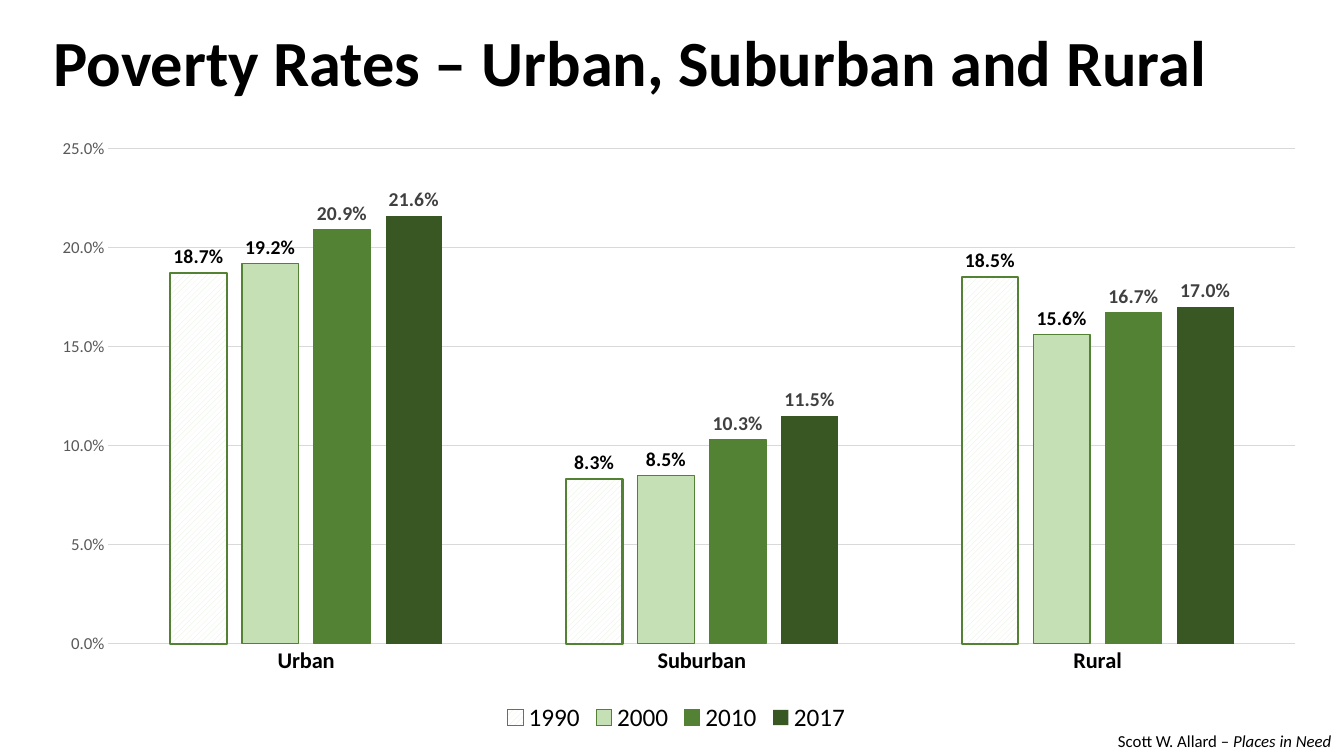
from lxml import etree
from pptx import Presentation
from pptx.chart.data import CategoryChartData
from pptx.dml.color import RGBColor
from pptx.enum.chart import XL_CHART_TYPE, XL_LABEL_POSITION, XL_LEGEND_POSITION, XL_TICK_MARK
from pptx.enum.dml import MSO_PATTERN
from pptx.enum.text import MSO_ANCHOR, PP_ALIGN
from pptx.oxml.ns import qn
from pptx.util import Inches, Pt


def rgb(hex_color):
    return RGBColor.from_string(hex_color)


def style(font, size, color="000000", bold=False):
    font.name = "Calibri"
    font.size = Pt(size)
    font.bold = bold
    font.color.rgb = rgb(color)


prs = Presentation()
prs.slide_width, prs.slide_height = Inches(13.33), Inches(7.5)
slide = prs.slides.add_slide(prs.slide_layouts[5])

# Title
title = slide.shapes.title
title.left, title.top = Inches(0.43), Inches(0.16)
title.width, title.height = Inches(12.45), Inches(0.88)
title.fill.solid()
title.fill.fore_color.rgb = rgb("FFFFFF")
title.text_frame.text = "Poverty Rates – Urban, Suburban and Rural"
title.text_frame.vertical_anchor = MSO_ANCHOR.MIDDLE
heading = title.text_frame.paragraphs[0]
heading.alignment = PP_ALIGN.LEFT
style(heading.font, 46, bold=True)

# Poverty rates: year, rates, fill, outline, outline width, label colour
years = [
    ("1990", (0.187, 0.083, 0.185), None, "548235", 1.5, "000000"),
    ("2000", (0.192, 0.085, 0.156), "C5E0B4", "548235", 1, "000000"),
    ("2010", (0.209, 0.103, 0.167), "548235", "548235", 0.75, "404040"),
    ("2017", (0.216, 0.115, 0.17), "385723", None, 0, "404040"),
]
rates = CategoryChartData(number_format="0.0%")
rates.categories = ["Urban", "Suburban", "Rural"]
for year, values, *_ in years:
    rates.add_series(year, values)
chart = slide.shapes.add_chart(
    XL_CHART_TYPE.COLUMN_CLUSTERED,
    Inches(0.42), Inches(1.26), Inches(12.58), Inches(6.06), rates,
).chart
chart.has_title = False
style(chart.font, 10)

# Columns and their labels
plot = chart.plots[0]
plot.gap_width, plot.overlap = 219, -27
plot.vary_by_categories = False
for series, (_, _, fill, outline, width, label_color) in zip(plot.series, years):
    column = series.format
    if fill:
        column.fill.solid()
        column.fill.fore_color.rgb = rgb(fill)
    else:
        column.fill.patterned()
        column.fill.pattern = MSO_PATTERN.WIDE_UPWARD_DIAGONAL
        column.fill.fore_color.rgb = rgb("E2F0D9")
        column.fill.back_color.rgb = rgb("FFFFFF")
    if outline:
        column.line.color.rgb = rgb(outline)
        column.line.width = Pt(width)
    else:
        column.line.fill.background()
    labels = series.data_labels
    labels.show_value = True
    labels.position = XL_LABEL_POSITION.OUTSIDE_END
    labels.number_format, labels.number_format_is_linked = "0.0%", False
    style(labels.font, 14, label_color, bold=True)

# Axes
areas, percent = chart.category_axis, chart.value_axis
for axis in (areas, percent):
    axis.major_tick_mark = axis.minor_tick_mark = XL_TICK_MARK.NONE
style(areas.tick_labels.font, 16, bold=True)
style(percent.tick_labels.font, 12, "595959")
percent.minimum_scale, percent.maximum_scale, percent.major_unit = 0, 0.25, 0.05
percent.tick_labels.number_format = "0.0%"
percent.tick_labels.number_format_is_linked = False
percent.format.line.fill.background()
for line in (areas.format.line, percent.major_gridlines.format.line):
    line.color.rgb = rgb("D9D9D9")
    line.width = Pt(0.75)

# Legend
chart.has_legend = True
chart.legend.position = XL_LEGEND_POSITION.BOTTOM
chart.legend.include_in_layout = False
style(chart.legend.font, 18)

# Place of the plot inside the chart
plot_area = chart.element.find(".//" + qn("c:plotArea"))
for layout in plot_area.findall(qn("c:layout")):
    plot_area.remove(layout)
layout = etree.Element(qn("c:layout"))
plot_area.insert(0, layout)
manual = etree.SubElement(layout, qn("c:manualLayout"))
for tag, value in (
    ("layoutTarget", "inner"), ("xMode", "edge"), ("yMode", "edge"),
    ("x", 0.052), ("y", 0.035), ("w", 0.936), ("h", 0.811),
):
    etree.SubElement(manual, qn("c:" + tag)).set("val", str(value))

# Citation
citation = slide.shapes.add_textbox(Inches(10.99), Inches(7.2), Inches(2.34), Inches(0.3))
citation.text_frame.word_wrap = False
credit = citation.text_frame.paragraphs[0]
style(credit.font, 12)
credit.add_run().text = "Scott W. Allard – "
book = credit.add_run()
book.text = "Places in Need"
book.font.italic = True

prs.save("out.pptx")
